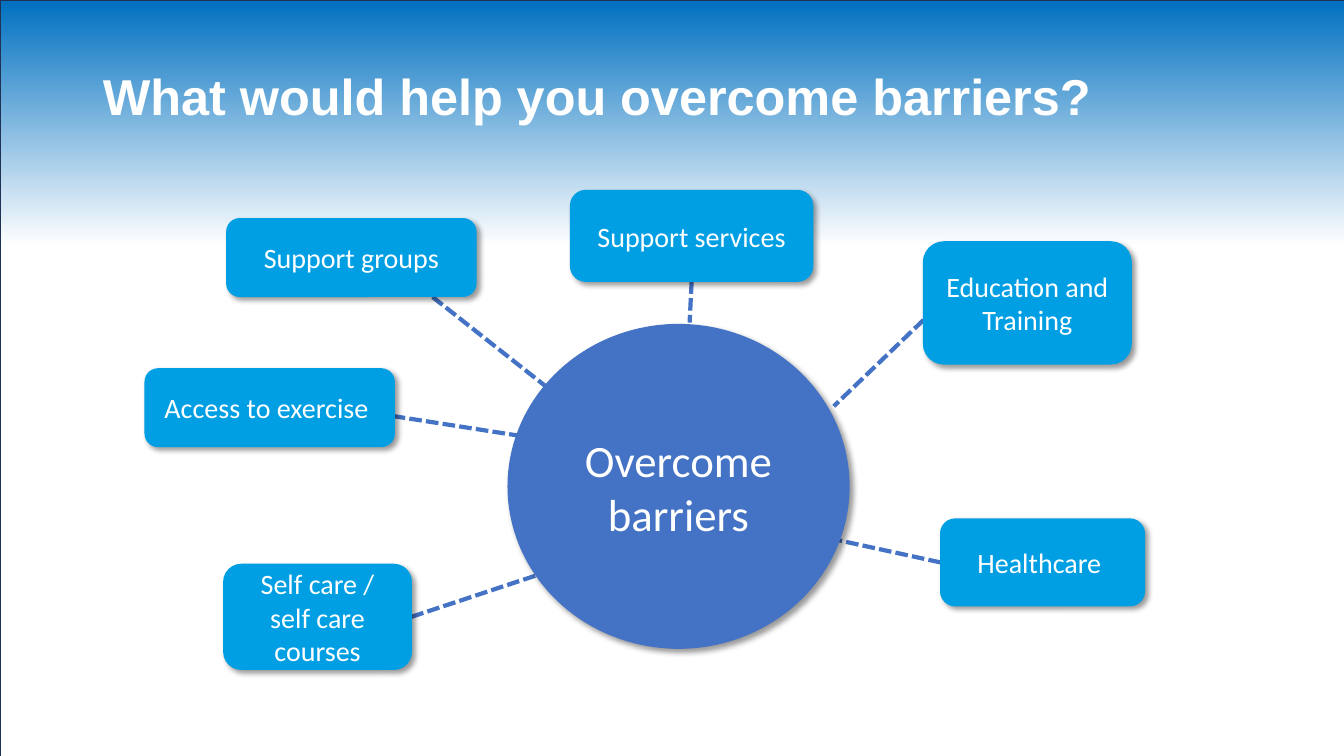
from lxml import etree
from pptx import Presentation
from pptx.dml.color import RGBColor
from pptx.enum.dml import MSO_LINE
from pptx.enum.shapes import MSO_CONNECTOR, MSO_SHAPE
from pptx.enum.text import MSO_ANCHOR, PP_ALIGN
from pptx.oxml.ns import qn
from pptx.util import Inches, Pt

COLORS = {
    "sky": "0070C0",
    "white": "FFFFFF",
    "edge": "1E3256",
    "hub": "4472C4",
    "idea": "009FE3",
    "shadow": "000000",
}

IDEAS = [
    ("Self care / self care courses", (2.22, 5.6, 1.86, 1.04), (1, 0.5), (6.73, 5.24)),
    ("Support services", (5.66, 1.89, 2.4, 0.9), (0.5, 1), (6.84, 3.2)),
    ("Healthcare ", (9.33, 5.15, 2.02, 0.86), (0, 0.5), (7.72, 5.23)),
    ("Access to exercise ", (1.44, 3.66, 2.47, 0.77), (0.66, 0.44), (5.13, 4.32)),
    ("Support groups", (2.25, 2.17, 2.47, 0.77), (0.72, 0.74), (5.46, 3.87)),
    ("Education and Training", (9.16, 2.4, 2.06, 1.21), (0, 0.64), (8.27, 4.03)),
]


def rgb(name):
    return RGBColor.from_string(COLORS[name])


def write(sp, text, size, font="Calibri", bold=False, align=PP_ALIGN.CENTER):
    tf = sp.text_frame
    tf.word_wrap = True
    tf.vertical_anchor = MSO_ANCHOR.MIDDLE
    p = tf.paragraphs[0]
    p.alignment = align
    r = p.add_run()
    r.text = text
    r.font.size = Pt(size)
    r.font.name = font
    r.font.bold = bold
    r.font.color.rgb = rgb("white")
    return p


def add_shadow(sp):
    sp.shadow.inherit = False
    effects = sp._element.spPr.find(qn("a:effectLst"))
    outer = etree.SubElement(effects, qn("a:outerShdw"), blurRad=str(Pt(4)),
                             dist=str(Pt(3)), dir=str(45 * 60000), algn="tl")
    color = etree.SubElement(outer, qn("a:srgbClr"), val=COLORS["shadow"])
    etree.SubElement(color, qn("a:alpha"), val="40000")


def add_bubble(s, kind, box, text, color, size):
    sp = s.shapes.add_shape(kind, *map(Inches, box))
    sp.fill.solid()
    sp.fill.fore_color.rgb = rgb(color)
    sp.line.color.rgb = rgb(color)
    sp.line.width = Pt(1)
    add_shadow(sp)
    write(sp, text, size)


def add_link(s, box, anchor, end):
    x, y, w, h = box
    start = (x + w * anchor[0], y + h * anchor[1])
    link = s.shapes.add_connector(MSO_CONNECTOR.STRAIGHT, *map(Inches, start + end))
    link.line.color.rgb = rgb("hub")
    link.line.width = Pt(3)
    link.line.dash_style = MSO_LINE.SQUARE_DOT
    etree.SubElement(link._element.spPr, qn("a:effectLst"))


def add_backdrop(s, box):
    sp = s.shapes.add_shape(MSO_SHAPE.RECTANGLE, *map(Inches, box))
    sp.shadow.inherit = False
    sp.fill.gradient()
    sp.fill.gradient_angle = 270
    for stop, (position, color) in zip(sp.fill.gradient_stops,
                                       [(0, "sky"), (0.31, "white")]):
        stop.position = position
        stop.color.rgb = rgb(color)
    sp.line.color.rgb = rgb("edge")
    sp.line.width = Pt(1)
    s.shapes.title._element.addprevious(sp._element)


def add_title(s, box, text):
    title = s.shapes.title
    title.left, title.top, title.width, title.height = map(Inches, box)
    p = write(title, text, 36, font="Arial", bold=True, align=PP_ALIGN.LEFT)
    p.line_spacing = 0.9


def add_mind_map(s, hub_box, hub_text, ideas):
    for _, box, anchor, end in ideas:
        add_link(s, box, anchor, end)
    add_bubble(s, MSO_SHAPE.OVAL, hub_box, hub_text, "hub", 32)
    for text, box, _, _ in ideas:
        add_bubble(s, MSO_SHAPE.ROUNDED_RECTANGLE, box, text, "idea", 20)


def main():
    prs = Presentation()
    prs.slide_width, prs.slide_height = Inches(13.33), Inches(7.5)
    s = prs.slides.add_slide(prs.slide_layouts[5])
    add_backdrop(s, (0, 0, 13.69, 7.86))
    add_title(s, (0.92, 0.26, 11.5, 1.45), "What would help you overcome barriers?")
    add_mind_map(s, (5.04, 3.22, 3.38, 3.21), "Overcome barriers", IDEAS)
    prs.save("out.pptx")


if __name__ == "__main__":
    main()
